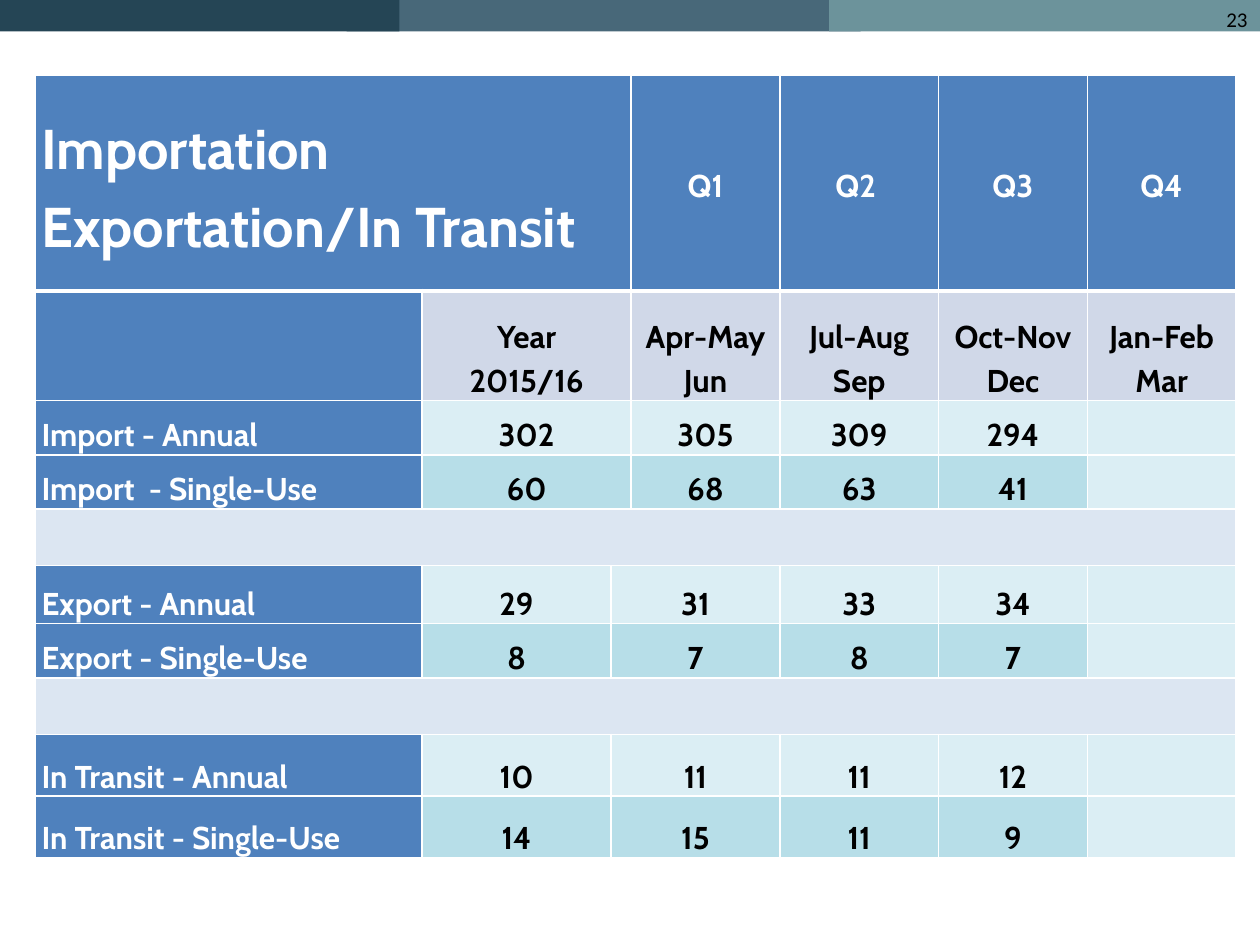
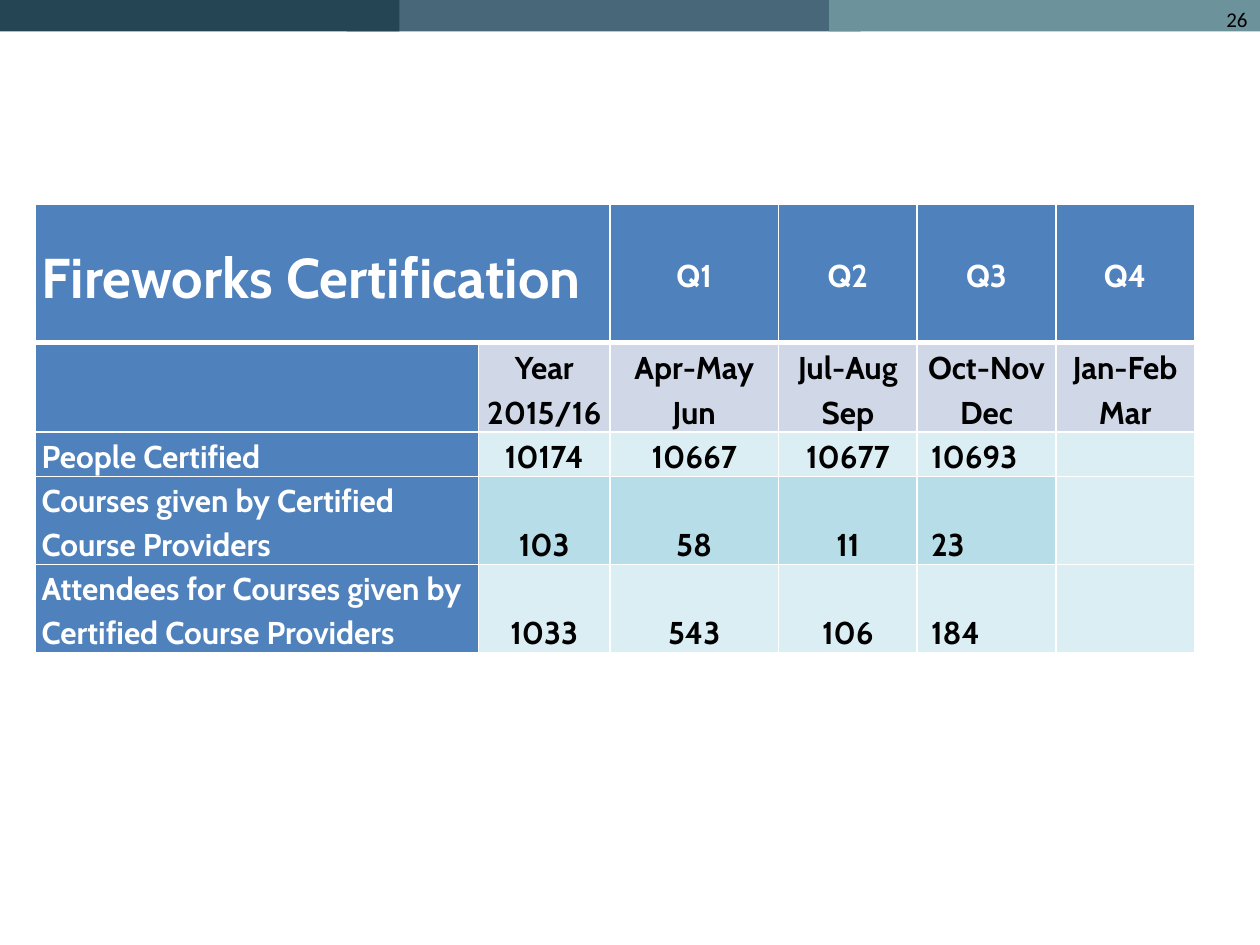
"""Build two slides of quarterly statistics tables under a three-colour band."""
from dataclasses import dataclass

from lxml.etree import SubElement
from pptx import Presentation
from pptx.dml.color import RGBColor
from pptx.enum.shapes import MSO_SHAPE
from pptx.enum.text import MSO_ANCHOR, PP_ALIGN
from pptx.oxml.ns import qn
from pptx.util import Inches, Pt


@dataclass(frozen=True)
class Theme:
    middle_band: str = "486879"
    left_band: str = "254555"
    right_band: str = "6C939B"
    header: str = "4F81BD"
    months: str = "D0D8E8"
    annual: str = "DBEEF4"
    single_use: str = "B7DEE8"
    spacer: str = "DCE6F2"
    white: str = "FFFFFF"
    black: str = "000000"
    table_font: str = "Cabin"
    number_font: str = "Calibri"
    title_size: int = 32
    cell_size: int = 18
    number_size: int = 12
    thin_border: int = 1
    thick_border: int = 3
    line_spacing: float = 1.15


theme = Theme()
presentation = Presentation()
presentation.slide_width = Inches(10)
presentation.slide_height = Inches(7.5)
grid = presentation.slide_width / 100

BANDS = [
    (27.5, 40.8, theme.middle_band),
    (0, 31.7, theme.left_band),
    (65.8, 34.2, theme.right_band),
]
MONTHS = ["", "Year\n2015/16", "Apr-May\nJun", "Jul-Aug\nSep", "Oct-Nov\nDec", "Jan-Feb\nMar"]
WIDE_YEAR = (0, 1, 3, 4, 5, 6)
WIDE_FIRST_QUARTER = (0, 1, 2, 4, 5, 6)
SIX_COLUMNS = (0, 1, 2, 3, 4, 5)

SLIDES = [
    {
        "number": "23",
        "top": 6,
        "columns": [30.7, 15, 1.6, 11.8, 12.6, 11.8, 11.8],
        "third_quarter_align": PP_ALIGN.CENTER,
        "rows": [
            ("header", 17.1, (0, 3, 4, 5, 6),
             ["Importation\nExportation/In Transit", "Q1", "Q2 ", "Q3", "Q4"]),
            ("months", 8.7, WIDE_YEAR, MONTHS),
            ("annual", 4.3, WIDE_YEAR, ["Import - Annual", "302", "305", "309", "294", ""]),
            ("single_use", 4.3, WIDE_YEAR, ["Import  - Single-Use", "60", "68", "63", "41", ""]),
            ("spacer", 4.5, (0,), [""]),
            ("annual", 4.6, WIDE_FIRST_QUARTER, ["Export - Annual", "29", "31", "33", "34", ""]),
            ("single_use", 4.3, WIDE_FIRST_QUARTER,
             ["Export - Single-Use", "8", "7", "8", "7", ""]),
            ("spacer", 4.5, (0,), [""]),
            ("annual", 4.9, WIDE_FIRST_QUARTER,
             ["In Transit - Annual", "10", "11", "11", "12", ""]),
            ("single_use", 4.9, WIDE_FIRST_QUARTER,
             ["In Transit - Single-Use", "14", "15", "11", "9", ""]),
        ],
    },
    {
        "number": "26",
        "top": 16.2,
        "columns": [35.2, 10.4, 13.4, 11, 11, 11],
        "third_quarter_align": PP_ALIGN.LEFT,
        "rows": [
            ("header", 11, (0, 2, 3, 4, 5), ["Fireworks Certification", "Q1", "Q2", "Q3", "Q4"]),
            ("months", 7.1, SIX_COLUMNS, MONTHS),
            ("annual", 3.5, SIX_COLUMNS,
             ["People Certified", "10174", "10667", "10677", "10693", ""]),
            ("single_use", 7, SIX_COLUMNS,
             ["Courses given by Certified Course Providers", "103", "58", "11", "23", ""]),
            ("annual", 7, SIX_COLUMNS,
             ["Attendees for Courses given by Certified Course Providers",
              "1033", "543", "106", "184", ""]),
        ],
    },
]


def format_text(text_frame, font, size, color, align, bold=False, spacing=None):
    for paragraph in text_frame.paragraphs:
        paragraph.alignment = align
        paragraph.line_spacing = spacing
        paragraph.font.size = Pt(size)
        for run in paragraph.runs:
            run.font.name = font
            run.font.size = Pt(size)
            run.font.bold = bold
            run.font.color.rgb = RGBColor.from_string(color)


def paint_cell(cell, fill, top_width, bottom_width):
    properties = cell._tc.get_or_add_tcPr()
    widths = {"L": theme.thin_border, "R": theme.thin_border, "T": top_width, "B": bottom_width}
    for side, width in widths.items():
        line = SubElement(properties, qn(f"a:ln{side}"), w=str(Pt(width)))
        SubElement(SubElement(line, qn("a:solidFill")), qn("a:srgbClr"), val=theme.white)
    cell.fill.solid()
    cell.fill.fore_color.rgb = RGBColor.from_string(fill)


for content in SLIDES:
    slide = presentation.slides.add_slide(presentation.slide_layouts[6])
    for left, width, color in BANDS:
        band = slide.shapes.add_shape(
            MSO_SHAPE.RECTANGLE, int(left * grid), 0, int(width * grid), int(2.5 * grid))
        band.shadow.inherit = False
        band.fill.solid()
        band.fill.fore_color.rgb = RGBColor.from_string(color)
        band.line.fill.background()

    number_box = slide.shapes.add_textbox(
        int(76.7 * grid), 0, int(23.3 * grid), int(5.2 * grid))
    number_box.text_frame.word_wrap = True
    number_box.text_frame.text = content["number"]
    format_text(number_box.text_frame, theme.number_font, theme.number_size,
                theme.black, PP_ALIGN.RIGHT)

    columns, rows = content["columns"], content["rows"]
    table = slide.shapes.add_table(
        len(rows), len(columns), int(2.8 * grid), int(content["top"] * grid),
        int(sum(columns) * grid), int(sum(row[1] for row in rows) * grid)).table
    table.first_row = False
    table.horz_banding = False
    for column, width in zip(table.columns, columns):
        column.width = int(width * grid)

    for row_index, (kind, height, starts, texts) in enumerate(rows):
        table.rows[row_index].height = int(height * grid)
        top_width = theme.thick_border if kind == "months" else theme.thin_border
        bottom_width = theme.thick_border if kind == "header" else theme.thin_border
        ends = (*starts[1:], len(columns))
        for position, (start, end, text) in enumerate(zip(starts, ends, texts)):
            is_label = position == 0
            is_value = kind in ("annual", "single_use")
            fill = getattr(theme, kind)
            if is_label and kind != "spacer":
                fill = theme.header
            elif is_value and not text:
                fill = theme.annual
            for column_index in range(start, end):
                paint_cell(table.cell(row_index, column_index), fill, top_width, bottom_width)

            cell = table.cell(row_index, start)
            if end - start > 1:
                cell.merge(table.cell(row_index, end - 1))
            cell.margin_left = cell.margin_right = Inches(0.05)
            cell.margin_top = cell.margin_bottom = 0
            cell.vertical_anchor = MSO_ANCHOR.MIDDLE if kind == "header" else MSO_ANCHOR.BOTTOM
            align = PP_ALIGN.LEFT if is_label else PP_ALIGN.CENTER
            if is_value and position == 4:
                align = content["third_quarter_align"]
                if align == PP_ALIGN.LEFT:
                    cell.margin_left = Inches(0.11)
            cell.text_frame.text = text
            format_text(
                cell.text_frame, theme.table_font,
                theme.title_size if is_label and kind == "header" else theme.cell_size,
                theme.white if is_label or kind == "header" else theme.black,
                align, bold=True, spacing=theme.line_spacing)

presentation.save("out.pptx")
